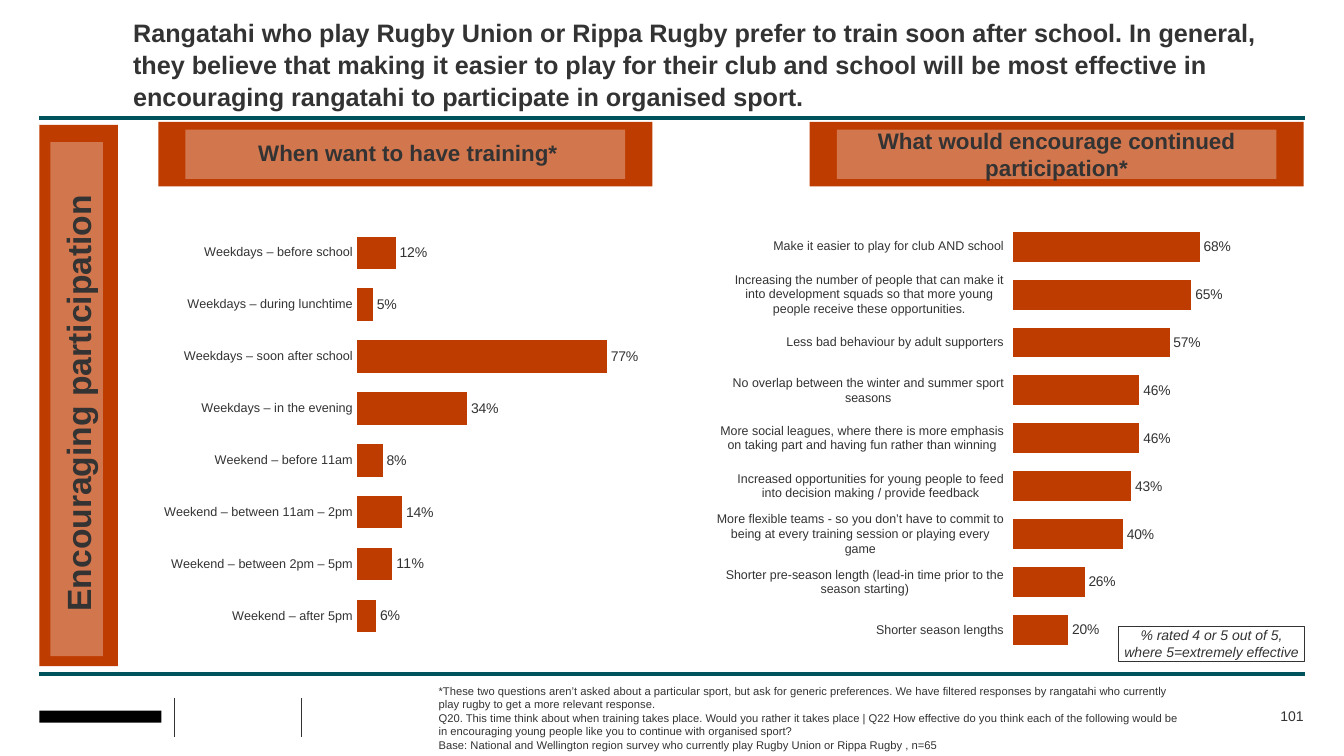
"""Builds the slide on what encourages rangatahi to take part in rugby."""
from lxml import etree
from pptx import Presentation
from pptx import util as u
from pptx.chart.data import CategoryChartData
from pptx.dml.color import RGBColor
from pptx.enum import chart as ch, shapes, text
from pptx.oxml import parse_xml
from pptx.oxml.ns import nsdecls, qn

CELL = u.Inches(0.1)
INK = RGBColor(0x33, 0x33, 0x33)
RUST = RGBColor(0xBF, 0x3C, 0x00)
TEAL = RGBColor(0x00, 0x52, 0x5C)
WHITE = RGBColor(0xFF, 0xFF, 0xFF)
BLACK = RGBColor(0x00, 0x00, 0x00)
FONT = "Arial"
LEFT, RIGHT = 3.9, 129.4

TITLE = (
    "Rangatahi who play Rugby Union or Rippa Rugby prefer to train soon after school. "
    "In general, they believe that making it easier to play for their club and school "
    "will be most effective in encouraging rangatahi to participate in organised sport."
)
NOTES = [
    "*These two questions aren’t asked about a particular sport, but ask for generic "
    "preferences. We have filtered responses by rangatahi who currently play rugby to "
    "get a more relevant response.",
    "Q20. This time think about when training takes place. Would you rather it takes "
    "place | Q22 How effective do you think each of the following would be in "
    "encouraging young people like you to continue with organised sport?",
    "Base: National and Wellington region survey who currently play Rugby Union or "
    "Rippa Rugby , n=65",
]
TRAINING_TIMES = {
    "Weekdays – before school": 0.12,
    "Weekdays – during lunchtime": 0.05,
    "Weekdays – soon after school": 0.77,
    "Weekdays – in the evening": 0.34,
    "Weekend – before 11am": 0.08,
    "Weekend – between 11am – 2pm": 0.14,
    "Weekend – between 2pm – 5pm": 0.11,
    "Weekend – after 5pm": 0.06,
}
ENCOURAGEMENTS = {
    "Shorter season lengths": 0.20,
    "Shorter pre-season length (lead-in time prior to the season starting)": 0.26,
    "More flexible teams - so you don’t have to commit to being at every training "
    "session or playing every game": 0.40,
    "Increased opportunities for young people to feed into decision making / provide "
    "feedback": 0.43,
    "More social leagues, where there is more emphasis on taking part and having fun "
    "rather than winning": 0.46,
    "No overlap between the winter and summer sport seasons": 0.46,
    "Less bad behaviour by adult supporters": 0.57,
    "Increasing the number of people that can make it into development squads so that "
    "more young people receive these opportunities.": 0.65,
    "Make it easier to play for club AND school": 0.68,
}


def cells(*counts):
    """Turn counts of grid cells into lengths."""
    return [round(count * CELL) for count in counts]


def assign(target, values):
    """Set each attribute named in values."""
    for name, value in values.items():
        setattr(target, name, value)


def style(font, size, **extra):
    """Give a font the face and ink of the slide."""
    assign(font, {"name": FONT, "size": u.Pt(size), **extra})
    font.color.rgb = INK


def write(shape, lines, size, align=text.PP_ALIGN.CENTER,
          anchor=text.MSO_ANCHOR.TOP, spacing=None, **extra):
    """Fill a shape with one paragraph per line."""
    frame = shape.text_frame
    assign(frame, {
        "margin_left": 0, "margin_right": 0, "margin_top": 0, "margin_bottom": 0,
        "word_wrap": True, "auto_size": text.MSO_AUTO_SIZE.NONE,
        "vertical_anchor": anchor,
    })
    frame.text = "\n".join(lines)
    for paragraph in frame.paragraphs:
        assign(paragraph, {"alignment": align, "line_spacing": spacing})
        style(paragraph.font, size, **extra)


def label(slide, area, lines, size, **extra):
    """Add a text box on the grid."""
    box = slide.shapes.add_textbox(*cells(*area))
    write(box, lines, size, **extra)
    return box


def block(slide, area, colour=None, opacity=100):
    """Add a flat rectangle, unfilled when no colour is given."""
    rect = slide.shapes.add_shape(shapes.MSO_SHAPE.RECTANGLE, *cells(*area))
    rect.shadow.inherit = False
    if colour is None:
        rect.fill.background()
        rect.line.color.rgb = INK
        rect.line.width = u.Pt(0.75)
        return rect
    rect.line.fill.background()
    rect.fill.solid()
    rect.fill.fore_color.rgb = colour
    if opacity < 100:
        tint = rect.fill._xPr.find(".//" + qn("a:srgbClr"))
        etree.SubElement(tint, qn("a:alpha")).set("val", str(opacity * 1000))
    return rect


def panel(slide, outer, inner):
    """Add a rust block with a paler block inside it."""
    block(slide, outer, RUST)
    block(slide, inner, WHITE, 30)


def rule(slide, ends, colour, width):
    """Add a straight line without a shadow."""
    line = slide.shapes.add_connector(shapes.MSO_CONNECTOR.STRAIGHT, *cells(*ends))
    line.line.color.rgb = colour
    line.line.width = u.Pt(width)
    etree.SubElement(line._element.spPr, qn("a:effectLst"))


def bars(slide, area, shares, plot_left, tick, top_down):
    """Add a bar chart of percentages whose plot starts at plot_left."""
    data = CategoryChartData(number_format="0%")
    data.categories = list(shares)
    data.add_series("Series 1", list(shares.values()))
    chart = slide.shapes.add_chart(
        ch.XL_CHART_TYPE.BAR_CLUSTERED, *cells(*area), data).chart
    assign(chart, {"has_legend": False, "has_title": False})
    style(chart.font, 12)

    names, scale = chart.category_axis, chart.value_axis
    assign(names, {"major_tick_mark": tick, "reverse_order": top_down,
                   "has_major_gridlines": False})
    names.format.line.fill.background()
    style(names.tick_labels.font, 9)
    assign(scale, {"visible": False, "minimum_scale": 0, "maximum_scale": 1,
                   "has_major_gridlines": False})

    plot = chart.plots[0]
    assign(plot, {"gap_width": 60, "overlap": -10, "vary_by_categories": False,
                  "has_data_labels": True})
    assign(plot.data_labels, {
        "show_value": True, "number_format": "0%", "number_format_is_linked": False,
        "position": ch.XL_LABEL_POSITION.OUTSIDE_END})
    style(plot.data_labels.font, 10)
    fill = plot.series[0].format.fill
    fill.solid()
    fill.fore_color.rgb = RUST

    plot_area = chart._chartSpace.chart.plotArea
    for layout in plot_area.findall(qn("c:layout")):
        plot_area.remove(layout)
    sizes = {"x": plot_left, "y": 0, "w": round(1 - plot_left, 3), "h": 1}
    parts = '<c:layoutTarget val="inner"/><c:xMode val="edge"/><c:yMode val="edge"/>'
    parts += "".join(f'<c:{side} val="{share}"/>' for side, share in sizes.items())
    plot_area.insert(0, parse_xml(
        f'<c:layout {nsdecls("c")}><c:manualLayout>{parts}</c:manualLayout></c:layout>'))


def main():
    """Build and save the slide."""
    deck = Presentation()
    deck.slide_width, deck.slide_height = cells(133.3, 75)
    slide = deck.slides.add_slide(deck.slide_layouts[5])

    for row in (11.7, 66.9):
        rule(slide, (LEFT, row, RIGHT, row), TEAL, 3)
    for column in (17.3, 29.9):
        rule(slide, (column, 69.2, column, 73.1), INK, 1)
    block(slide, (LEFT, 70.5, 12.1, 1.2), BLACK)

    headline = slide.shapes.title
    assign(headline, dict(zip(("left", "top", "width", "height"),
                              cells(13.2, 1.6, 116.1, 4.4))))
    write(headline, [TITLE], 18, align=text.PP_ALIGN.LEFT, spacing=1.05, bold=True)

    for column in (15.7, 80.3):
        panel(slide, (column, 12.1, 49, 6.4), (column + 2.7, 12.85, 43.6, 4.9))
    label(slide, (23.2, 13.8, 34.5, 2.7), ["When want to have training*"], 16, bold=True)
    label(slide, (82.3, 12.6, 45, 5.4),
          ["What would encourage continued participation*"], 16, bold=True)

    bars(slide, (15.2, 22.5, 52.4, 41.2), TRAINING_TIMES, 0.385,
         ch.XL_TICK_MARK.NONE, True)
    bars(slide, (71.1, 22.1, 56.6, 42.8), ENCOURAGEMENTS, 0.512,
         ch.XL_TICK_MARK.OUTSIDE, False)

    panel(slide, (LEFT, 12.4, 7.8, 53.7), (5, 14.1, 5.2, 51))
    theme = label(slide, (-16.1, 38, 47.6, 4), ["Encouraging participation"], 24, bold=True)
    theme.rotation = 270

    scale_note = block(slide, (110.9, 62.2, 18.5, 3.4))
    write(scale_note, ["% rated 4 or 5 out of 5,", "where 5=extremely effective"],
          10, italic=True)
    label(slide, (43.5, 70.1, 73.8, 2.2), NOTES, 8, align=text.PP_ALIGN.LEFT,
          anchor=text.MSO_ANCHOR.MIDDLE)
    label(slide, (118.7, 69.9, 10.6, 2.2), ["101"], 10, align=text.PP_ALIGN.RIGHT,
          anchor=text.MSO_ANCHOR.MIDDLE)
    deck.save("out.pptx")


if __name__ == "__main__":
    main()
